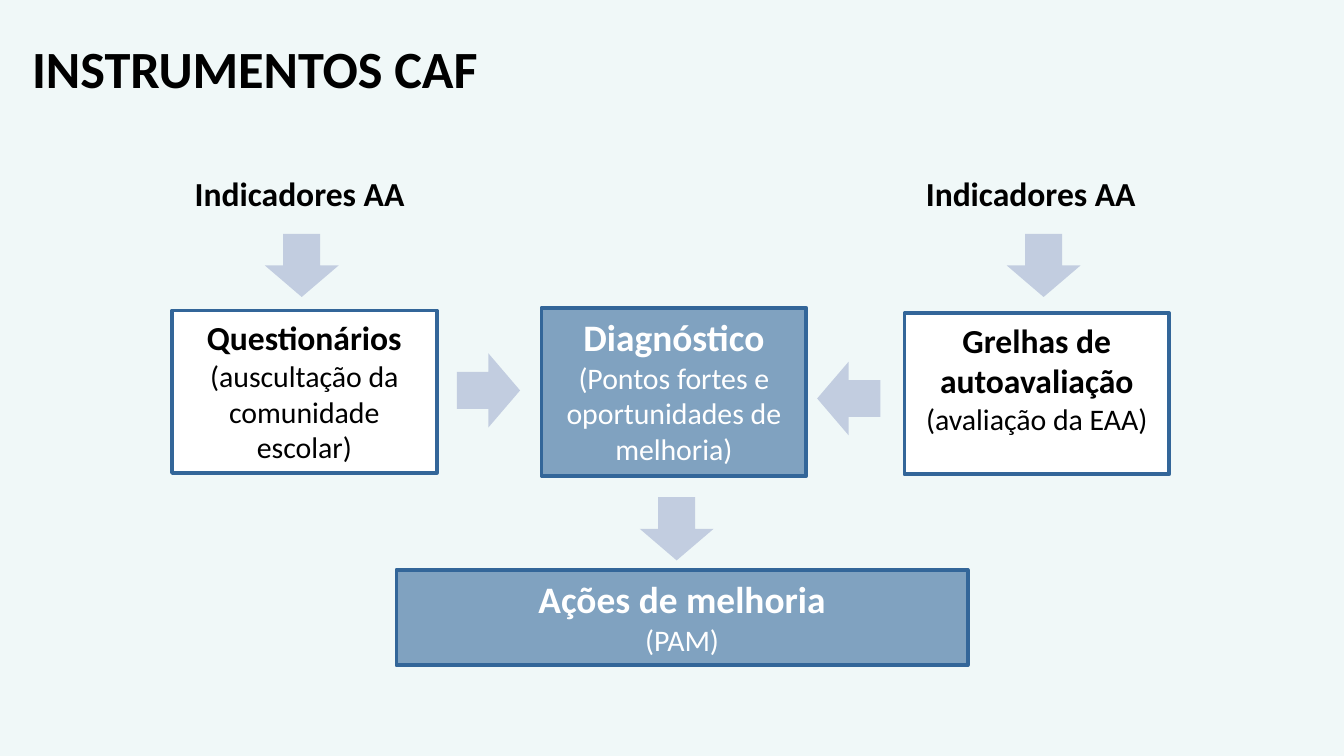
"""Builds the slide of self-assessment instruments and how they lead to improvement actions."""
from lxml import etree
from pptx import Presentation
from pptx.dml.color import RGBColor
from pptx.enum.shapes import MSO_SHAPE
from pptx.enum.text import MSO_ANCHOR, PP_ALIGN
from pptx.oxml.ns import qn
from pptx.util import Inches, Pt

RECT, DOWN_ARROW = MSO_SHAPE.RECTANGLE, MSO_SHAPE.DOWN_ARROW
TOP, LEFT, CENTER = MSO_ANCHOR.TOP, PP_ALIGN.LEFT, PP_ALIGN.CENTER
FONT = "Calibri"
COLORS = {
    "background": "F0F8F8",
    "black": "000000",
    "white": "FFFFFF",
    "blue": "336699",
    "arrow": "C2CDE0",
}


def rgb(name):
    return RGBColor.from_string(COLORS[name])


def add_text(p, text, size=18, bold=True, color="black", align=LEFT):
    p.alignment = align
    r = p.add_run()
    r.text = text
    font = r.font
    font.name, font.size, font.bold = FONT, Pt(size), bold
    font.color.rgb = rgb(color)


class SlideBuilder:
    def __init__(self, slide):
        self.slide = slide
        slide.background.fill.solid()
        slide.background.fill.fore_color.rgb = rgb("background")

    def label(self, text, x, y, w, h, size=18):
        tf = self.slide.shapes.add_textbox(Inches(x), Inches(y), Inches(w), Inches(h)).text_frame
        tf.word_wrap = True
        add_text(tf.paragraphs[0], text, size=size)

    def shape(self, kind, x, y, w, h, fill):
        sp = self.slide.shapes.add_shape(kind, Inches(x), Inches(y), Inches(w), Inches(h))
        sp.shadow.inherit = False
        sp.fill.solid()
        sp.fill.fore_color.rgb = rgb(fill)
        return sp

    def arrow(self, x, y, rotation=0):
        sp = self.shape(DOWN_ARROW, x, y, 0.55, 0.47, "arrow")
        sp.line.fill.background()
        sp.rotation = rotation

    def box(self, heading, detail, x, y, w, h, result=False):
        sp = self.shape(RECT, x, y, w, h, "blue" if result else "white")
        if result:
            fill_color = sp.element.spPr.find(qn("a:solidFill"))[0]
            etree.SubElement(fill_color, qn("a:alpha")).set("val", "59000")
        sp.line.color.rgb = rgb("blue")
        sp.line.width = Pt(2)
        tf = sp.text_frame
        tf.word_wrap = True
        tf.vertical_anchor = TOP
        color = "white" if result else "black"
        add_text(tf.paragraphs[0], heading, size=20 if result else 18, color=color, align=CENTER)
        add_text(tf.add_paragraph(), detail, size=16, bold=False, color=color, align=CENTER)


def main():
    prs = Presentation()
    prs.slide_width = Inches(10)
    prs.slide_height = prs.slide_width * 9 // 16
    s = SlideBuilder(prs.slides.add_slide(prs.slide_layouts[6]))

    s.label("INSTRUMENTOS CAF", 0.14, 0.22, 9.45, 0.94, size=28)
    for label_x, arrow_x in ((1.35, 1.97), (6.79, 7.49)):
        s.label("Indicadores AA", label_x, 1.24, 1.89, 0.4)
        s.arrow(arrow_x, 1.74)

    s.box("Questionários", "(auscultação da comunidade escolar)", 1.28, 2.31, 1.97, 1.21)
    s.box("Grelhas de autoavaliação", "(avaliação da EAA)", 6.73, 2.33, 1.97, 1.2)
    s.arrow(3.36, 2.67, rotation=270)
    s.arrow(6.04, 2.73, rotation=90)
    s.box("Diagnóstico", "(Pontos fortes e oportunidades de melhoria)",
          4.03, 2.29, 1.97, 1.25, result=True)
    s.arrow(4.76, 3.7)
    s.box("Ações de melhoria", "(PAM)", 2.95, 4.24, 4.25, 0.71, result=True)

    prs.save("out.pptx")


if __name__ == "__main__":
    main()
